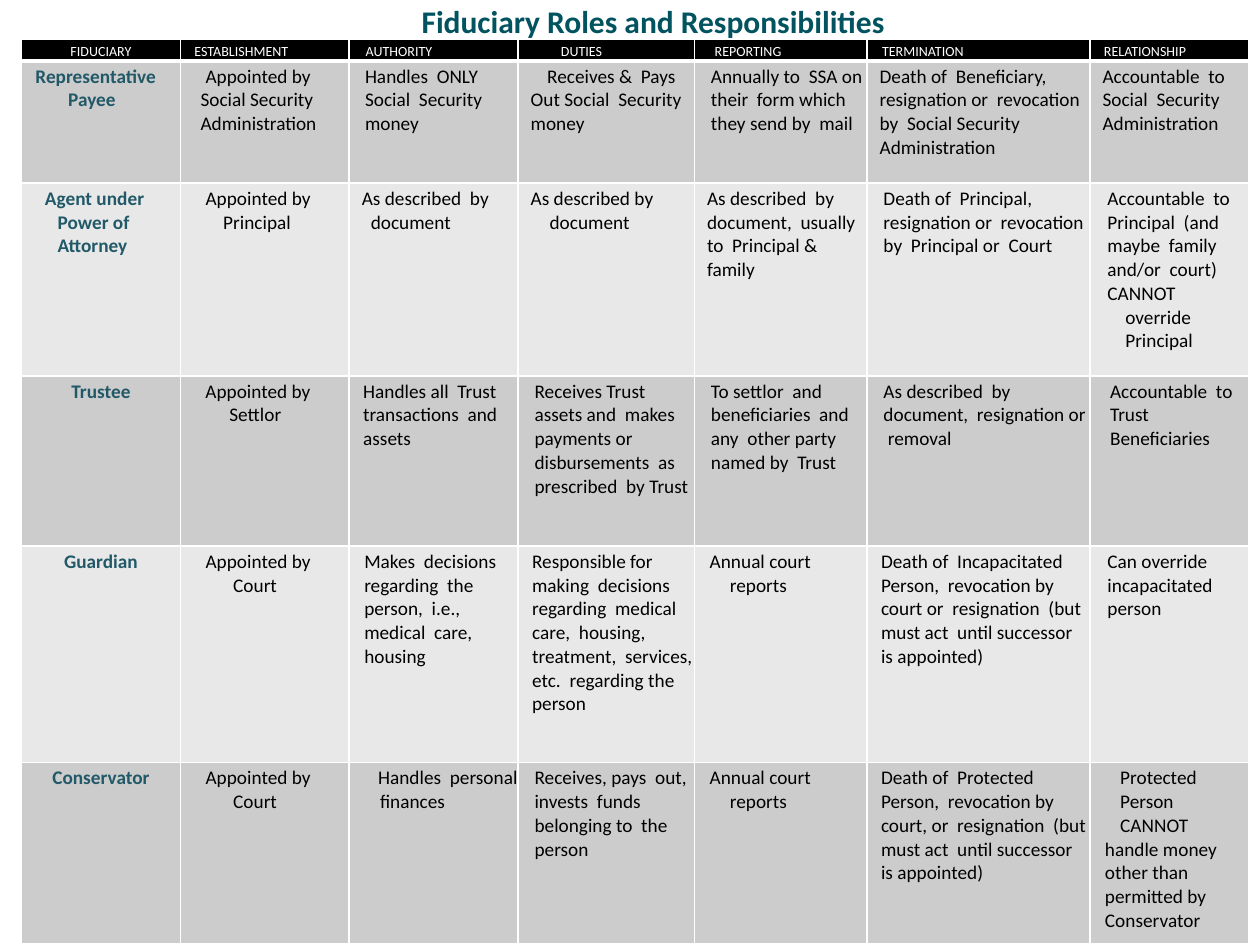
from lxml import etree
from pptx import Presentation
from pptx.dml.color import RGBColor
from pptx.enum.text import MSO_ANCHOR, MSO_AUTO_SIZE, PP_ALIGN
from pptx.oxml.ns import qn
from pptx.util import Pt

LEFT, CENTER = PP_ALIGN.LEFT, PP_ALIGN.CENTER
TOP = MSO_ANCHOR.TOP
NO_FIT = MSO_AUTO_SIZE.NONE

WHITE = RGBColor(0xFF, 0xFF, 0xFF)
BLACK = RGBColor(0, 0, 0)
DARK = RGBColor(0xCC, 0xCC, 0xCC)
LIGHT = RGBColor(0xE8, 0xE8, 0xE8)
TEAL = RGBColor(0x00, 0x53, 0x5F)
BLUE = RGBColor(0x21, 0x59, 0x68)
FONT = "Calibri"

WIDTHS = [90.7, 96.5, 96.5, 100.8, 98.6, 127.4, 90.7]
HEIGHTS = [12.2, 69.8, 110.2, 97.2, 123.8, 103.7]

# Each paragraph: text, left margin, first-line indent; no margin means centred.
HEAD = [
    [("FIDUCIARY", None, 0)],
    [("ESTABLISHMENT", 8, 0)],
    [("AUTHORITY", 9.4, 0)],
    [("DUTIES", 24.5, 0)],
    [("REPORTING", 11.5, 0)],
    [("TERMINATION", 8.6, 0)],
    [("RELATIONSHIP", 8, 0)],
]
PAYEE = [
    [("Representative  Payee", 26.6, -18.7)],
    [("Appointed by  Social Security  Administration", 11.5, 2.9)],
    [("Handles  ONLY Social  Security  money", 9, 0)],
    [("Receives &  Pays Out Social  Security money", 7.2, 9.4)],
    [("Annually to  SSA on their  form which  they send by  mail", 9.4, 0)],
    [("Death of  Beneficiary,  resignation or  revocation by  Social Security  "
      "Administration", 7.2, 0)],
    [("Accountable  to Social  Security  Administration", 7.2, 0)],
]
AGENT = [
    [("Agent under  Power of  Attorney", 20.5, -7.2)],
    [("Appointed by  Principal", 24.5, -10.1)],
    [("As described  by document", 12.3, -5.1)],
    [("As described by  document", 18, -10.8)],
    [("As described  by document,  usually to  Principal &  family", 7.2, 0)],
    [("Death of  Principal,  resignation or  revocation by  Principal or  Court", 9.4, 0)],
    [("Accountable  to Principal  (and maybe  family and/or  court)  CANNOT", 10, 0),
     ("override  Principal", 20.2, 0)],
]
TRUSTEE = [
    [("Trustee", None, 0)],
    [("Appointed by  Settlor", 28, -13.7)],
    [("Handles all  Trust  transactions  and assets", 8, 0)],
    [("Receives Trust  assets and  makes  payments or  disbursements  as "
      "prescribed  by Trust", 9.4, 0)],
    [("To settlor  and   beneficiaries  and any  other party  named by  Trust", 9.4, 0)],
    [("As described  by document,  resignation or  removal", 9.4, 0)],
    [("Accountable  to Trust  Beneficiaries", 11.5, 0)],
]
GUARD = [
    [("Guardian", None, 0)],
    [("Appointed by  Court", 30.2, -15.8)],
    [("Makes  decisions  regarding  the person,  i.e., medical  care,  housing", 8.6, 0)],
    [("Responsible for  making  decisions  regarding  medical care,  housing,  "
      "treatment,  services, etc.  regarding the  person", 8, 0)],
    [("Annual court  reports", 20.2, -11.5)],
    [("Death of  Incapacitated  Person,  revocation by  court or  resignation  "
      "(but must act  until successor  is appointed)", 8, 0)],
    [("Can override  incapacitated  person", 10, 0)],
]
KEEPER = [
    [("Conservator", None, 0)],
    GUARD[1],
    [("Handles  personal  finances", 15.1, 1.4)],
    [("Receives, pays  out, invests  funds  belonging to  the person", 9.4, 0)],
    GUARD[4],
    [("Death of  Protected  Person,  revocation by  court, or  resignation  "
      "(but must act  until successor  is appointed)", 8, 0)],
    [("Protected  Person  CANNOT", 17.3, 0),
     ("handle money  other than  permitted by  Conservator", 8.6, 0)],
]
ROWS = [HEAD, PAYEE, AGENT, TRUSTEE, GUARD, KEEPER]


def style(par, size, color, bold):
    for run in par.runs:
        font = run.font
        font.name, font.size, font.bold = FONT, Pt(size), bold
        font.color.rgb = color


def indent(par, left, first):
    props = par._p.get_or_add_pPr()
    props.set("marL", str(Pt(left)))
    props.set("indent", str(Pt(first)))


def add_title(slide):
    title = slide.shapes.title
    title.left, title.top = Pt(240), Pt(0)
    title.width, title.height = Pt(276), Pt(22.3)
    frame = title.text_frame
    frame.text = "Fiduciary Roles and Responsibilities"
    frame.auto_size, frame.vertical_anchor = NO_FIT, TOP
    frame.margin_left = frame.margin_right = frame.margin_bottom = 0
    frame.margin_top = Pt(0.9)
    par = frame.paragraphs[0]
    par.alignment = LEFT
    indent(par, 0.9, 0)
    style(par, 18, TEAL, True)


def set_edges(cell, row):
    props = cell._tc.get_or_add_tcPr()
    wide = {"B"} if row == 0 else {"T"} if row == 1 else set()
    for spot, side in enumerate("LRTB"):
        line = etree.Element(qn("a:ln" + side), w=str(Pt(3 if side in wide else 1)))
        fill = etree.SubElement(line, qn("a:solidFill"))
        etree.SubElement(fill, qn("a:srgbClr"), val=str(WHITE))
        props.insert(spot, line)


def fill_cell(cell, pars, row, col):
    cell.margin_left = cell.margin_right = cell.margin_bottom = 0
    cell.margin_top = Pt(2.2)
    cell.vertical_anchor = TOP
    cell.fill.solid()
    cell.fill.fore_color.rgb = BLACK if row == 0 else DARK if row % 2 else LIGHT
    set_edges(cell, row)
    color = WHITE if row == 0 else BLUE if col == 0 else BLACK
    frame = cell.text_frame
    frame.text = "\n".join(text for text, _, _ in pars)
    for par, (_, left, first) in zip(frame.paragraphs, pars):
        par.alignment = CENTER if left is None else LEFT
        indent(par, left or 0, first)
        style(par, 11 if row else 8, color, row > 0 and col == 0)


def add_grid(slide):
    frame = slide.shapes.add_table(
        len(HEIGHTS), len(WIDTHS), Pt(12.4), Pt(22.6), Pt(sum(WIDTHS)), Pt(sum(HEIGHTS)))
    table = frame.table
    table.horz_banding = False
    for col, width in zip(table.columns, WIDTHS):
        col.width = Pt(width)
    for row, height in zip(table.rows, HEIGHTS):
        row.height = Pt(height)
    for row, cells in enumerate(ROWS):
        for col, pars in enumerate(cells):
            fill_cell(table.cell(row, col), pars, row, col)


def main():
    deck = Presentation()
    deck.slide_width, deck.slide_height = Pt(720), Pt(540)
    slide = deck.slides.add_slide(deck.slide_layouts[5])
    add_grid(slide)
    add_title(slide)
    deck.save("out.pptx")


if __name__ == "__main__":
    main()
